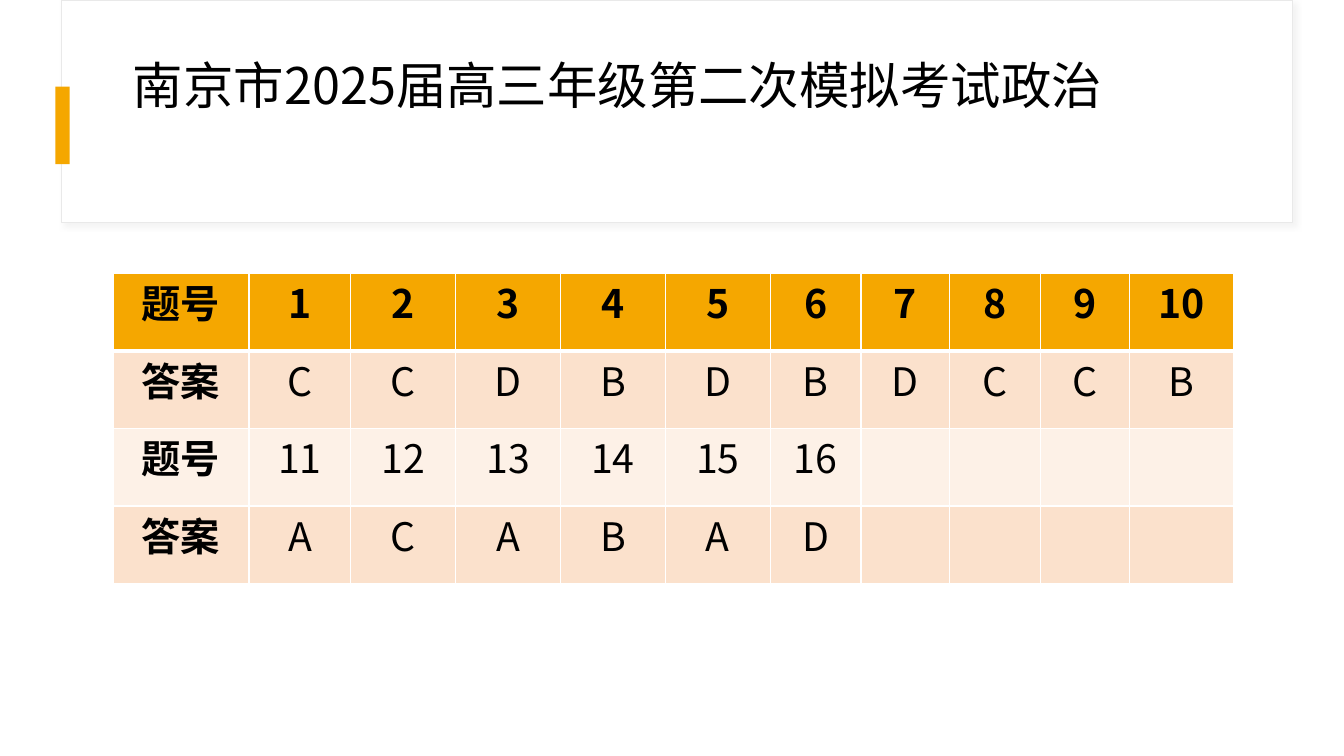
from dataclasses import dataclass

from lxml.etree import SubElement
from pptx import Presentation
from pptx.dml.color import RGBColor
from pptx.enum.shapes import MSO_SHAPE
from pptx.enum.text import MSO_ANCHOR, PP_ALIGN
from pptx.oxml import parse_xml
from pptx.oxml.ns import nsdecls, qn
from pptx.util import Inches, Pt


@dataclass(frozen=True)
class Theme:
    font: str = "Noto Sans CJK SC"
    title_size: int = 36
    cell_size: int = 28
    text: str = "000000"
    white: str = "FFFFFF"
    accent: str = "F5A700"
    band: str = "FBE1CC"
    light_band: str = "FDF1E7"
    frame: str = "E9E9E9"
    shadow: str = "D9D9D9"


THEME = Theme()
TITLE = "南京市2025届高三年级第二次模拟考试政治"
ANSWERS = [
    ["题号", *map(str, range(1, 11))],
    ["答案", *"CCDBDBDCCB"],
    ["题号", *map(str, range(11, 17))],
    ["答案", *"ACABAD"],
]
ROW_FILLS = [THEME.accent, THEME.band, THEME.light_band, THEME.band]
COL_WIDTHS = [1.35, 1.01] + [1.04] * 4 + [0.9, 0.88] * 2 + [1.04]
ROW_HEIGHT = 0.77


def rgb(value):
    return RGBColor.from_string(value)


def style_paragraph(p, size, bold=False):
    p.font.name = THEME.font
    p.font.size = Pt(size)
    p.font.bold = bold
    p.font.color.rgb = rgb(THEME.text)
    SubElement(p.font._element, qn("a:ea")).set("typeface", THEME.font)


def add_rect(s, left, top, width, height, fill, line=None):
    sp = s.shapes.add_shape(MSO_SHAPE.RECTANGLE, Inches(left), Inches(top),
                            Inches(width), Inches(height))
    sp.shadow.inherit = False
    sp.fill.solid()
    sp.fill.fore_color.rgb = rgb(fill)
    if line:
        sp.line.color.rgb = rgb(line)
        sp.line.width = Pt(0.75)
    else:
        sp.line.fill.background()
    return sp


def add_soft_shadow(sp):
    effects = sp._element.spPr.find(qn("a:effectLst"))
    effects.append(parse_xml(
        f'<a:outerShdw {nsdecls("a")} blurRad="{Pt(4)}" dist="{Pt(3)}" dir="2700000" '
        f'algn="tl" rotWithShape="0"><a:srgbClr val="{THEME.shadow}">'
        '<a:alpha val="30000"/></a:srgbClr></a:outerShdw>'))


def add_title(s, text):
    tf = s.shapes.add_textbox(Inches(1.22), Inches(0.6), Inches(11.12), Inches(1.29)).text_frame
    tf.word_wrap = True
    tf.vertical_anchor = MSO_ANCHOR.TOP
    tf.margin_top = 0
    p = tf.paragraphs[0]
    p.text = text
    p.line_spacing = 0.9
    style_paragraph(p, THEME.title_size)


def set_borders(cell, top, bottom):
    tcPr = cell._tc.get_or_add_tcPr()
    for i, (side, width) in enumerate(zip("LRTB", (1, 1, top, bottom))):
        tcPr.insert(i, parse_xml(
            f'<a:ln{side} {nsdecls("a")} w="{Pt(width)}"><a:solidFill>'
            f'<a:srgbClr val="{THEME.white}"/></a:solidFill></a:ln{side}>'))


def fill_cell(cell, text, fill, bold):
    cell.fill.solid()
    cell.fill.fore_color.rgb = rgb(fill)
    cell.margin_left = cell.margin_right = Inches(0.07)
    cell.margin_top = cell.margin_bottom = 0
    p = cell.text_frame.paragraphs[0]
    p.text = text
    p.alignment = PP_ALIGN.CENTER
    style_paragraph(p, THEME.cell_size, bold)


def add_answer_table(s):
    table = s.shapes.add_table(
        len(ANSWERS), len(COL_WIDTHS), Inches(1.12), Inches(2.71),
        Inches(sum(COL_WIDTHS)), Inches(ROW_HEIGHT * len(ANSWERS))).table
    table.first_row = table.horz_banding = False
    for column, width in zip(table.columns, COL_WIDTHS):
        column.width = Inches(width)
    for r, (values, fill) in enumerate(zip(ANSWERS, ROW_FILLS)):
        table.rows[r].height = Inches(ROW_HEIGHT)
        for c in range(len(COL_WIDTHS)):
            cell = table.cell(r, c)
            text = values[c] if c < len(values) else ""
            fill_cell(cell, text, fill, r == 0 or c == 0)
            set_borders(cell, 3 if r == 1 else 1, 3 if r == 0 else 1)


def main():
    prs = Presentation()
    prs.slide_width = Inches(13.33)
    prs.slide_height = Inches(7.5)
    s = prs.slides.add_slide(prs.slide_layouts[6])
    add_soft_shadow(add_rect(s, 0.61, 0, 12.21, 2.21, THEME.white, THEME.frame))
    add_rect(s, 0.55, 0.86, 0.14, 0.77, THEME.accent)
    add_title(s, TITLE)
    add_answer_table(s)
    prs.save("out.pptx")


if __name__ == "__main__":
    main()
